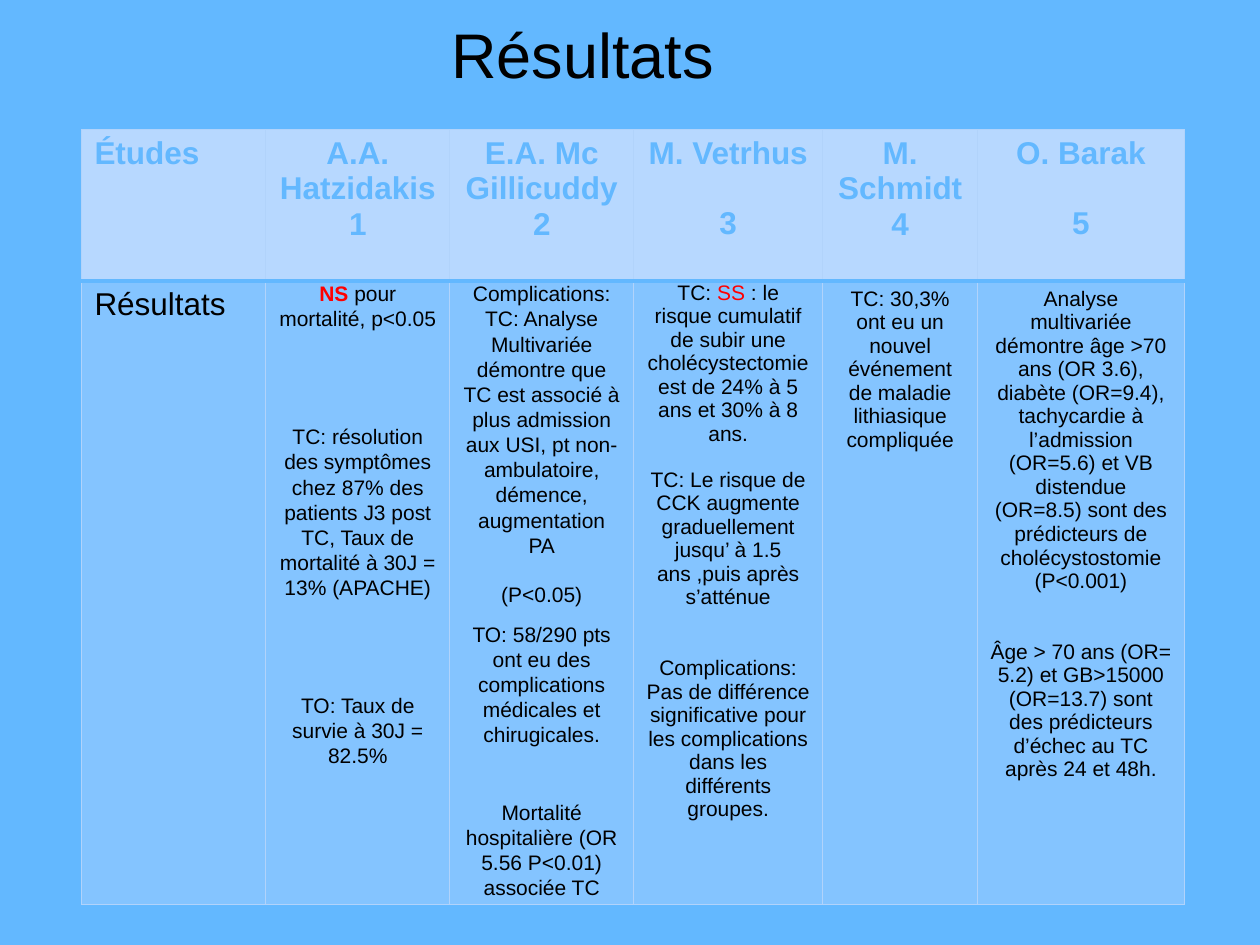
from lxml.etree import SubElement
from pptx import Presentation
from pptx.dml.color import RGBColor
from pptx.enum.text import MSO_ANCHOR, MSO_AUTO_SIZE, PP_ALIGN
from pptx.oxml import parse_xml
from pptx.oxml.ns import nsdecls, qn
from pptx.util import Inches, Pt

COLORS = {"sky": "63B8FF", "panel": "B7D8FF", "grid": "B1D3FB",
          "text": "000000", "alert": "FF0000"}
FONT = "Arial"
COLUMNS = [1.46, 1.46, 1.46, 1.5, 1.23, 1.64]
ROWS = [1.2, 4.95]

# Paragraphs are (space before in points, text); "*" encloses highlighted text
HEADERS = [
    [(0, "Études")],
    [(0, "A.A. Hatzidakis"), (0, "1")],
    [(0, "E.A. Mc Gillicuddy"), (0, "2")],
    [(0, "M. Vetrhus"), (20, "3")],
    [(0, "M. Schmidt"), (0, "4")],
    [(0, "O. Barak"), (20, "5")],
]
RESULTS = [
    [(0, "Résultats")],
    [(0, "*NS* pour mortalité, p<0.05"),
     (53, "TC: résolution des symptômes chez 87% des patients J3 post TC, "
          "Taux de mortalité à 30J = 13% (APACHE)"),
     (53, "TO: Taux de survie à 30J = 82.5%")],
    [(0, "Complications: TC: Analyse Multivariée démontre que TC est associé à\v"
         "plus admission aux USI, pt non-ambulatoire, démence, augmentation PA"),
     (14, "(P<0.05)"),
     (8, "TO: 58/290 pts ont eu des complications médicales et chirugicales."),
     (30, "Mortalité hospitalière (OR 5.56 P<0.01) associée TC")],
    [(0, "TC: *SS* : le"),
     (0, "risque cumulatif de subir une cholécystectomie est de 24% à 5 ans "
         "et 30% à 8 ans."),
     (13, "TC: Le risque de CCK augmente graduellement jusqu’ à 1.5 "
          "ans ,puis après s’atténue"),
     (27, "Complications:"),
     (0, "Pas de différence significative pour les complications dans les "
         "différents groupes.")],
    [(0, "TC: 30,3% ont eu un nouvel événement de maladie lithiasique"),
     (0, "compliquée")],
    [(0, "Analyse multivariée démontre âge >70 ans (OR 3.6), diabète (OR=9.4), "
         "tachycardie à l’admission (OR=5.6) et VB distendue (OR=8.5) sont des "
         "prédicteurs de cholécystostomie"),
     (0, "(P<0.001)"),
     (27, "Âge > 70 ans (OR= 5.2) et GB>15000 (OR=13.7) sont des prédicteurs "
          "d’échec au TC après 24 et 48h.")],
]


def rgb(name):
    return RGBColor.from_string(COLORS[name])


def style_run(r, size, color, bold=False):
    r.font.name = FONT
    r.font.size = Pt(size)
    r.font.bold = bold
    r.font.color.rgb = rgb(color)


def set_borders(cell, bottom):
    sides = {"lnL": ("grid", 0.75), "lnR": ("grid", 0.75),
             "lnT": ("grid", 0.75), "lnB": bottom}
    tcPr = cell._tc.get_or_add_tcPr()
    for i, (side, (color, width)) in enumerate(sides.items()):
        tcPr.insert(i, parse_xml(
            f'<a:{side} {nsdecls("a")} w="{Pt(width)}"><a:solidFill>'
            f'<a:srgbClr val="{COLORS[color]}"/></a:solidFill></a:{side}>'))


def fill_cell(cell, opacity=100):
    cell.fill.solid()
    cell.fill.fore_color.rgb = rgb("panel")
    if opacity < 100:
        clr = cell._tc.tcPr.find(qn("a:solidFill"))[0]
        SubElement(clr, qn("a:alpha")).set("val", str(opacity * 1000))


def write_cell(cell, paragraphs, size, color, align, bold=False, spacing=None):
    tf = cell.text_frame
    for i, (before, text) in enumerate(paragraphs):
        p = tf.paragraphs[0] if i == 0 else tf.add_paragraph()
        p.alignment = align
        if before:
            p.space_before = Pt(before)
        if spacing:
            p.line_spacing = spacing
        if "*" not in text:
            p.text = text
            for r in p.runs:
                style_run(r, size, color, bold)
            continue
        for j, part in enumerate(text.split("*")):
            if part:
                r = p.add_run()
                r.text = part
                marked = j % 2 == 1
                style_run(r, size, "alert" if marked else color,
                          marked and part == "NS")


def add_title(slide, left, top, width, height):
    sp = slide.shapes.title
    sp.left, sp.top, sp.width, sp.height = map(Inches, (left, top, width, height))
    tf = sp.text_frame
    tf.text = "Résultats"
    tf.auto_size = MSO_AUTO_SIZE.NONE
    tf.vertical_anchor = MSO_ANCHOR.BOTTOM
    p = tf.paragraphs[0]
    p.alignment = PP_ALIGN.CENTER
    style_run(p.runs[0], 36, "text")


def add_results_table(slide, left, top):
    table = slide.shapes.add_table(
        len(ROWS), len(COLUMNS), Inches(left), Inches(top),
        Inches(sum(COLUMNS)), Inches(sum(ROWS))).table
    table.first_row = table.horz_banding = False
    for row, height in zip(table.rows, ROWS):
        row.height = Inches(height)
    for i, width in enumerate(COLUMNS):
        table.columns[i].width = Inches(width)
        align = PP_ALIGN.CENTER if i else PP_ALIGN.LEFT

        # Study name and number
        head = table.cell(0, i)
        write_cell(head, HEADERS[i], 18, "sky", align, bold=True)
        fill_cell(head)
        set_borders(head, ("sky", 2))

        # Findings of the study
        body = table.cell(1, i)
        write_cell(body, RESULTS[i], 12 if i else 18, "text", align,
                   spacing=1.07 if i in (1, 2) else None)
        if i in (1, 2, 3):
            body.margin_top = body.margin_bottom = 0
        fill_cell(body, opacity=40)
        set_borders(body, ("grid", 0.75))
        body._tc.tcPr.find(qn("a:lnT")).set("w", str(Pt(2)))
        body._tc.tcPr.find(qn("a:lnT"))[0][0].set("val", COLORS["sky"])


def main():
    prs = Presentation()
    prs.slide_width, prs.slide_height = Inches(10), Inches(7.5)
    slide = prs.slides.add_slide(prs.slide_layouts[5])
    slide.background.fill.solid()
    slide.background.fill.fore_color.rgb = rgb("sky")
    add_title(slide, 1.17, 0.27, 6.91, 0.5)
    add_results_table(slide, 0.65, 1.03)
    prs.save("out.pptx")


if __name__ == "__main__":
    main()
